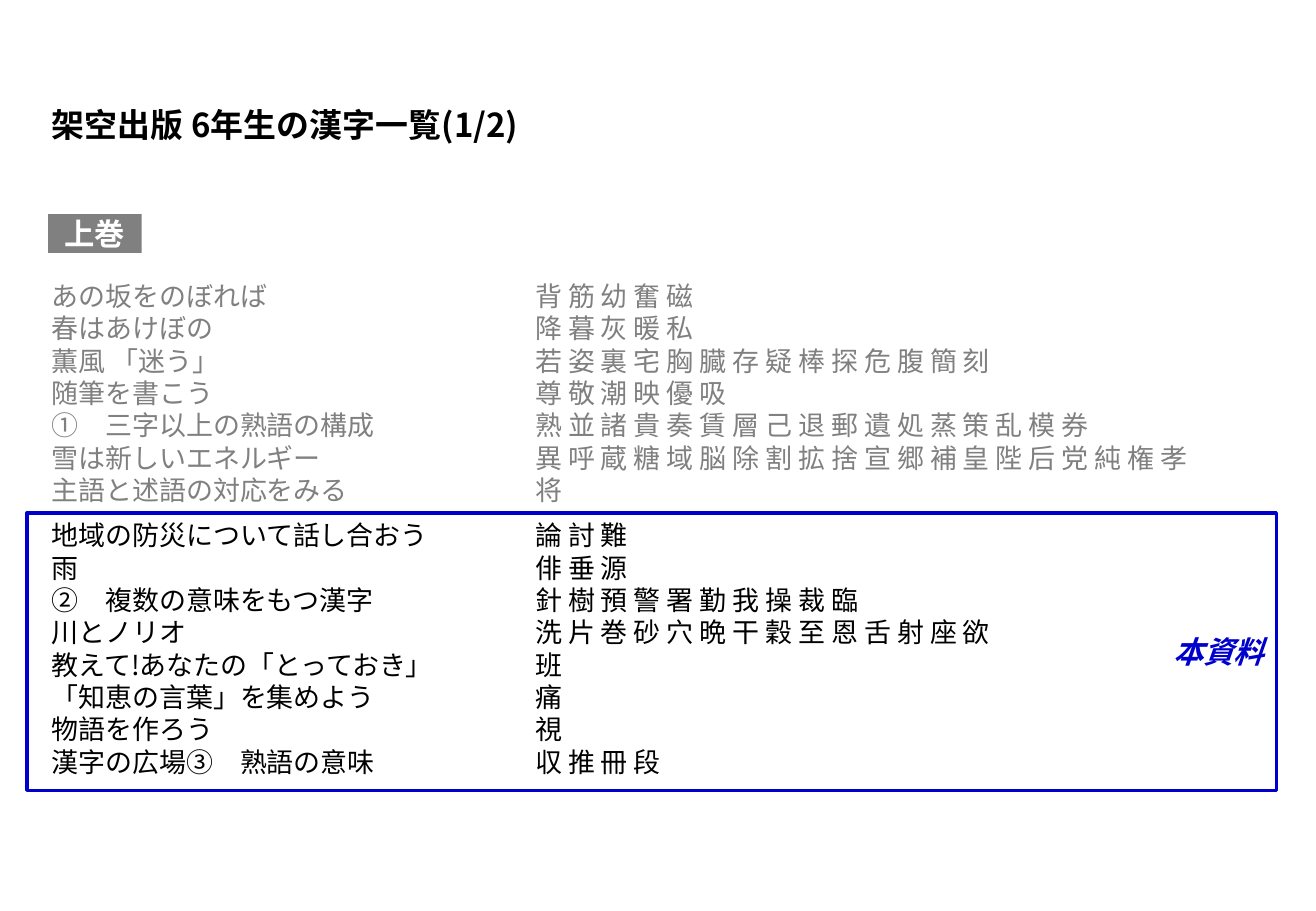
"""Build a slide that lists the sixth-grade kanji by textbook unit."""
import pptx
import pptx.util
import pptx.dml.color
import pptx.enum.shapes
import pptx.enum.text
import pptx.oxml.ns
import lxml.etree

Pt = pptx.util.Pt
PP_ALIGN = pptx.enum.text.PP_ALIGN
MSO_ANCHOR = pptx.enum.text.MSO_ANCHOR
qn = pptx.oxml.ns.qn

FONT = "Noto Sans CJK JP"
COLORS = {"done": "808080", "text": "000000", "white": "FFFFFF", "current": "0000CC"}

DONE_UNITS = [
    ("あの坂をのぼれば", "背 筋 幼 奮 磁"),
    ("春はあけぼの", "降 暮 灰 暖 私"),
    ("薫風 「迷う」", "若 姿 裏 宅 胸 臓 存 疑 棒 探 危 腹 簡 刻"),
    ("随筆を書こう", "尊 敬 潮 映 優 吸"),
    ("①　三字以上の熟語の構成", "熟 並 諸 貴 奏 賃 層 己 退 郵 遺 処 蒸 策 乱 模 券"),
    ("雪は新しいエネルギー", "異 呼 蔵 糖 域 脳 除 割 拡 捨 宣 郷 補 皇 陛 后 党 純 権 孝"),
    ("主語と述語の対応をみる", "将"),
]
CURRENT_UNITS = [
    ("地域の防災について話し合おう", "論 討 難"),
    ("雨", "俳 垂 源"),
    ("②　複数の意味をもつ漢字", "針 樹 預 警 署 勤 我 操 裁 臨"),
    ("川とノリオ", "洗 片 巻 砂 穴 晩 干 穀 至 恩 舌 射 座 欲"),
    ("教えて!あなたの「とっておき」", "班"),
    ("「知恵の言葉」を集めよう", "痛"),
    ("物語を作ろう", "視"),
    ("漢字の広場③　熟語の意味", "収 推 冊 段"),
]


def write(p, text, size, color, bold=False, italic=False, align=PP_ALIGN.LEFT):
    """Add one formatted run to a paragraph."""
    p.alignment = align
    r = p.add_run()
    r.text = text
    r.font.size = Pt(size)
    r.font.bold = bold
    r.font.italic = italic
    r.font.name = FONT
    r.font.color.rgb = pptx.dml.color.RGBColor.from_string(COLORS[color])
    lxml.etree.SubElement(r.font._element, qn("a:ea"), typeface=FONT)


prs = pptx.Presentation()
prs.slide_width, prs.slide_height = Pt(780), Pt(540)
s = prs.slides.add_slide(prs.slide_layouts[3])
title, names, kanji = s.placeholders

frames = [
    (title, (23.5, 58, 567, 31), MSO_ANCHOR.MIDDLE),
    (names, (23.5, 162, 286.5, 317), MSO_ANCHOR.TOP),
    (kanji, (310, 162, 462, 317), MSO_ANCHOR.TOP),
]
for sp, box, anchor in frames:
    sp.left, sp.top, sp.width, sp.height = map(Pt, box)
    tf = sp.text_frame
    tf.word_wrap = True
    tf.auto_size = pptx.enum.text.MSO_AUTO_SIZE.NONE
    tf.vertical_anchor = anchor

write(title.text_frame.paragraphs[0], "架空出版 6年生の漢字一覧(1/2)", 19.5, "text", bold=True)

for column, sp in enumerate((names, kanji)):
    tf = sp.text_frame
    for i, unit in enumerate(DONE_UNITS + CURRENT_UNITS):
        p = tf.add_paragraph() if i else tf.paragraphs[0]
        p.line_spacing = Pt(19.2)
        p.space_before = Pt(7.5 if i == len(DONE_UNITS) else 0)
        write(p, unit[column], 16, "done" if i < len(DONE_UNITS) else "text")
        pPr = p._p.get_or_add_pPr()
        pPr.set("marL", "0")
        pPr.set("indent", "0")
        lxml.etree.SubElement(pPr, qn("a:buNone"))

labels = [
    ("上巻", (28.5, 127, 55.5, 23), "done", None, "white", False, PP_ALIGN.CENTER),
    ("本資料", (16, 304, 740.5, 164.5), None, "current", "current", True, PP_ALIGN.RIGHT),
]
for text, box, fill, line, color, italic, align in labels:
    sp = s.shapes.add_shape(pptx.enum.shapes.MSO_SHAPE.RECTANGLE, *map(Pt, box))
    sp.shadow.inherit = False
    for part, key in ((sp.fill, fill), (sp.line.fill, line)):
        if key:
            part.solid()
            part.fore_color.rgb = pptx.dml.color.RGBColor.from_string(COLORS[key])
        else:
            part.background()
    if line:
        sp.line.width = Pt(2)
    tf = sp.text_frame
    tf.vertical_anchor = MSO_ANCHOR.MIDDLE
    write(tf.paragraphs[0], text, 18, color, bold=True, italic=italic, align=align)

prs.save("out.pptx")
